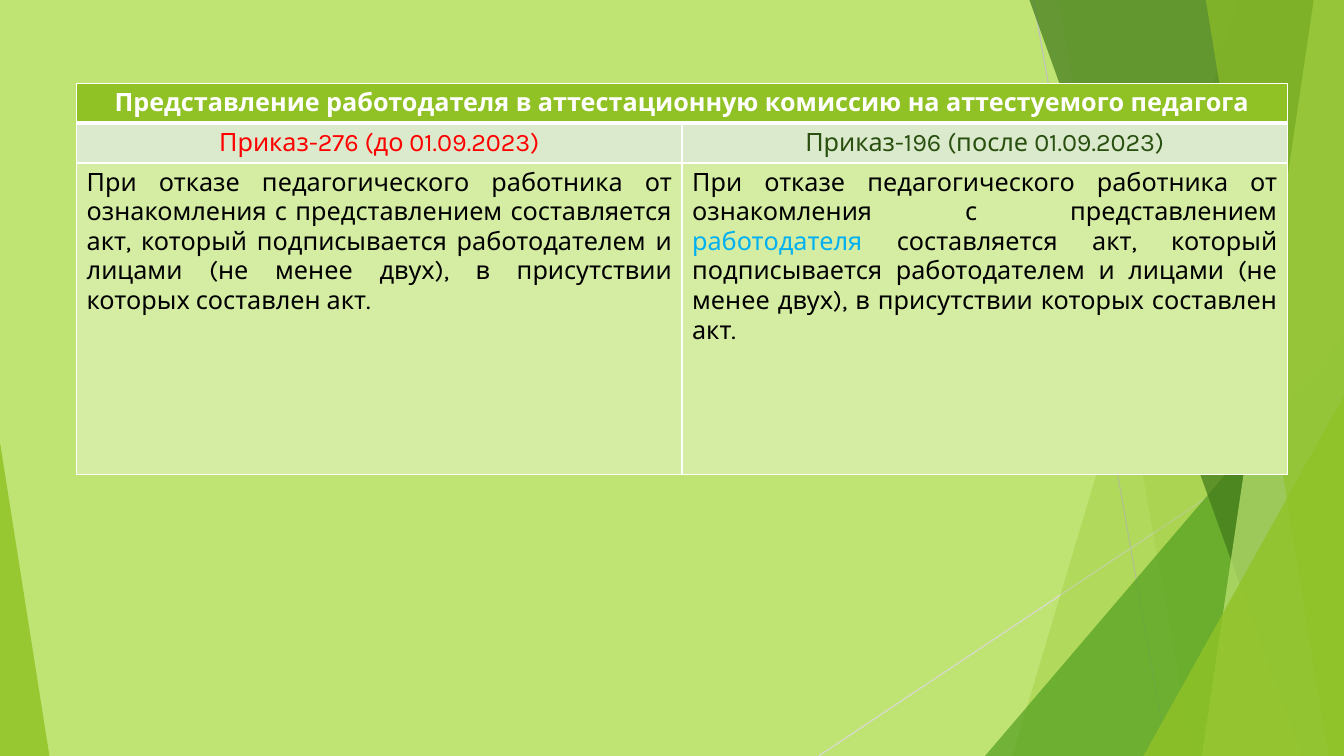
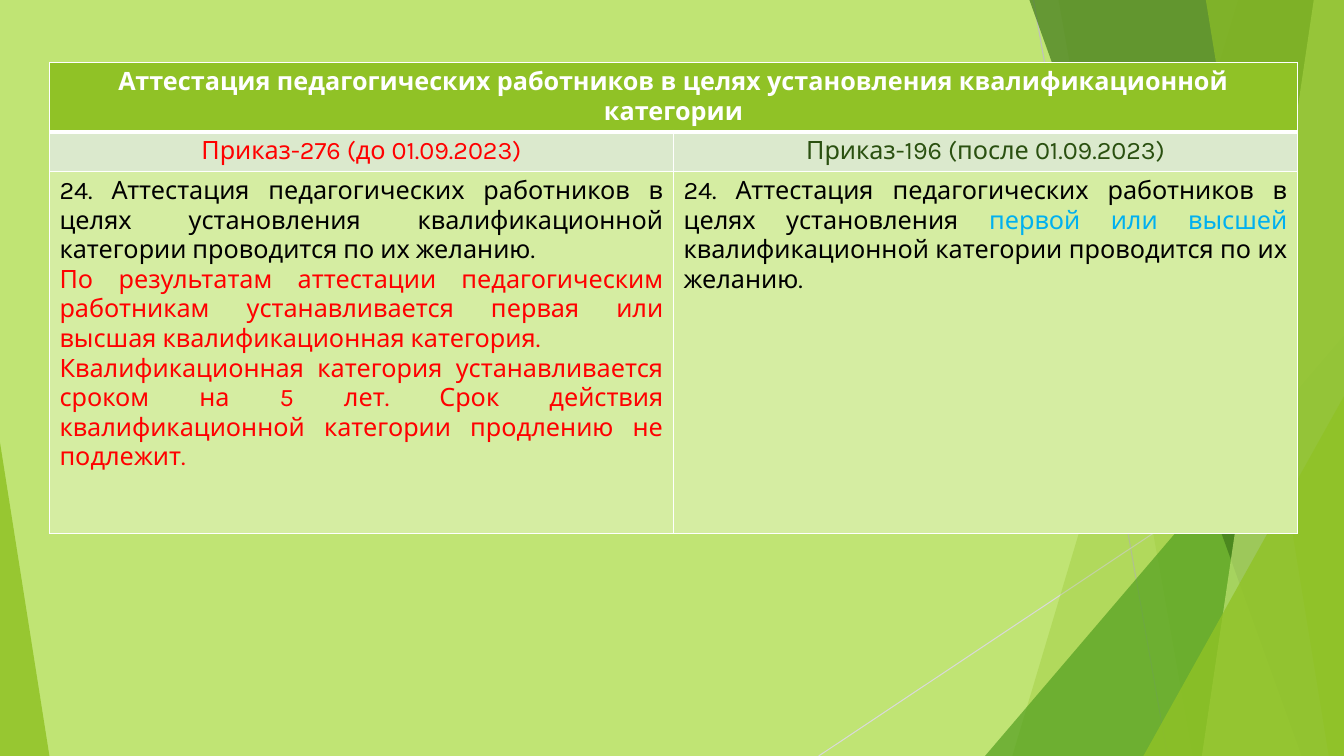
from lxml.etree import SubElement
from pptx import Presentation
from pptx.dml.color import RGBColor
from pptx.enum.shapes import MSO_CONNECTOR as Connector, MSO_SHAPE as Shape
from pptx.enum.text import PP_ALIGN as Align
from pptx.oxml.ns import qn
from pptx.util import Inches, Pt

WIDTH, HEIGHT = 13.33, 7.5
THEME = {
    "font": "Karla", "size": 18, "thin": 1, "thick": 3, "hairline": 0.75,
    "back": "C0E474", "lime": "90C226", "green": "54A021", "forest": "3F7819",
    "subhead": "DBE9CD", "body": "D5EDA2", "white": "FFFFFF", "black": "000000",
    "old": "FF0000", "new": "2A5010", "change": "00B0F0",
    "gray": "BFBFBF", "silver": "D9D9D9",
}

LINES = [
    ((10.25, 0), (11.58, HEIGHT), "gray"),
    ((WIDTH, 4.03), (8.12, HEIGHT), "silver"),
]
FACETS = [
    {"band": (12.28, 10.04), "color": "lime", "alpha": 30},
    {"band": (10.5, 11.83), "color": "lime", "alpha": 20},
    {"triangle": (9.77, WIDTH, 3.33), "tip": 1, "color": "green", "alpha": 72},
    {"band": (10.21, 12.91), "color": "forest", "alpha": 70},
    {"band": (13.03, 11.92), "color": "back", "alpha": 70},
    {"band": (11.96, 13.18), "color": "lime", "alpha": 65},
    {"triangle": (11.34, WIDTH, 3.93), "tip": 1, "color": "lime", "alpha": 80},
    {"triangle": (0, 0.49, 4.39), "tip": 0, "color": "lime", "alpha": 85},
]

SUBHEADS = [("Приказ-276 (до 01.09.2023)", "old"), ("Приказ-196 (после 01.09.2023)", "new")]
SLIDES = [
    {
        "at": (0.76, 0.83), "width": 12.01, "rows": (0.39, 0.39, 3.09),
        "title": "Представление работодателя в аттестационную комиссию на аттестуемого педагога",
        "body": [
            [[("При отказе педагогического работника от ознакомления с представлением "
               "составляется акт, который подписывается работодателем и лицами "
               "(не менее двух), в присутствии которых составлен акт.", "black")]],
            [[("При отказе педагогического работника от ознакомления с представлением ", "black"),
              ("работодателя", "change"),
              (" составляется акт, который подписывается работодателем и лицами "
               "(не менее двух), в присутствии которых составлен акт.", "black")]],
        ],
    },
    {
        "at": (0.49, 0.62), "width": 12.38, "rows": (0.68, 0.39, 3.59),
        "title": "Аттестация педагогических работников в целях установления квалификационной категории",
        "body": [
            [[("24. Аттестация педагогических работников в целях установления "
               "квалификационной категории проводится по их желанию.", "black")],
             [("По результатам аттестации педагогическим работникам устанавливается "
               "первая или высшая квалификационная категория.", "old")],
             [("Квалификационная категория устанавливается сроком на 5 лет. Срок действия "
               "квалификационной категории продлению не подлежит.", "old")]],
            [[("24. Аттестация педагогических работников в целях установления ", "black"),
              ("первой или высшей ", "change"),
              ("квалификационной категории проводится по их желанию.", "black")]],
        ],
    },
]


def rgb(name):
    return RGBColor.from_string(THEME[name])


def add_facet(page, facet):
    if "band" in facet:
        top, bottom = facet["band"]
        builder = page.shapes.build_freeform(Inches(top), 0)
        corners = [(WIDTH, 0), (WIDTH, HEIGHT), (bottom, HEIGHT)]
        builder.add_line_segments([(Inches(x), Inches(y)) for x, y in corners])
        shape = builder.convert_to_shape()
    else:
        left, right, top = facet["triangle"]
        shape = page.shapes.add_shape(Shape.ISOSCELES_TRIANGLE, Inches(left), Inches(top),
                                      Inches(right - left), Inches(HEIGHT - top))
        shape.adjustments[0] = facet["tip"]
    shape.shadow.inherit = False
    shape.line.fill.background()
    shape.fill.solid()
    shape.fill.fore_color.rgb = rgb(facet["color"])
    color = next(shape.element.spPr.iter(qn("a:srgbClr")))
    SubElement(color, qn("a:alpha"), val=str(facet["alpha"] * 1000))


def add_backdrop(page):
    for start, end, color in LINES:
        line = page.shapes.add_connector(Connector.STRAIGHT, *map(Inches, start + end))
        line.line.color.rgb = rgb(color)
        line.line.width = Pt(THEME["hairline"])
        SubElement(line.element.spPr, qn("a:effectLst"))
    for facet in FACETS:
        add_facet(page, facet)


def set_borders(cell, **widths):
    props = cell._tc.get_or_add_tcPr()
    for side in "LRTB":
        width = widths.get(side, THEME["thin"])
        border = SubElement(props, qn(f"a:ln{side}"), w=str(Pt(width)))
        fill = SubElement(border, qn("a:solidFill"))
        SubElement(fill, qn("a:srgbClr"), val=THEME["white"])


def write(cell, paragraphs, align=Align.CENTER, bold=False):
    for index, spans in enumerate(paragraphs):
        frame = cell.text_frame
        para = frame.add_paragraph() if index else frame.paragraphs[0]
        para.alignment = align
        for text, color in spans:
            span = para.add_run()
            span.text = text
            span.font.name = THEME["font"]
            span.font.size = Pt(THEME["size"])
            span.font.bold = bold
            span.font.color.rgb = rgb(color)


def add_comparison(page, content):
    rows = content["rows"]
    box = (*content["at"], content["width"], sum(rows))
    table = page.shapes.add_table(len(rows), len(SUBHEADS), *map(Inches, box)).table
    for column in table.columns:
        column.width = Inches(content["width"] / len(SUBHEADS))
    borders = [{"B": THEME["thick"]}, {"T": THEME["thick"]}, {}]
    for index, fill in enumerate(("lime", "subhead", "body")):
        table.rows[index].height = Inches(rows[index])
        for cell in table.rows[index].cells:
            set_borders(cell, **borders[index])
            cell.fill.solid()
            cell.fill.fore_color.rgb = rgb(fill)
    table.cell(0, 0).merge(table.cell(0, len(SUBHEADS) - 1))
    write(table.cell(0, 0), [[(content["title"], "white")]], bold=True)
    for index, (subhead, body) in enumerate(zip(SUBHEADS, content["body"])):
        write(table.cell(1, index), [[subhead]])
        write(table.cell(2, index), body, align=Align.JUSTIFY)


def main():
    """Build the slides comparing the two orders on teacher certification."""
    deck = Presentation()
    deck.slide_width, deck.slide_height = Inches(WIDTH), Inches(HEIGHT)
    backdrop = deck.slide_master.background.fill
    backdrop.solid()
    backdrop.fore_color.rgb = rgb("back")
    for content in SLIDES:
        page = deck.slides.add_slide(deck.slide_layouts[6])
        add_backdrop(page)
        add_comparison(page, content)
    deck.save("out.pptx")


if __name__ == "__main__":
    main()
